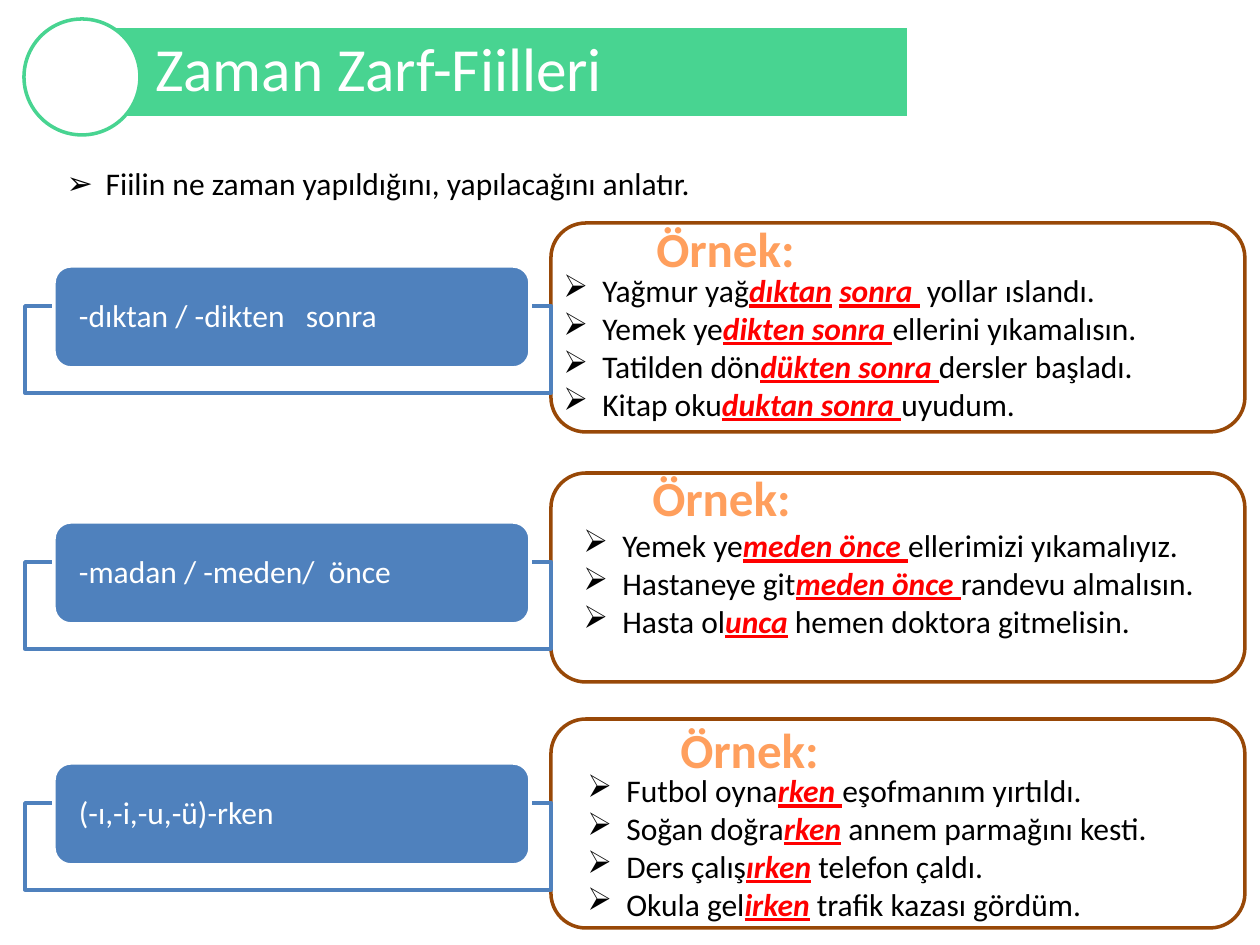
from pptx import Presentation
from pptx.dml.color import RGBColor
from pptx.enum.shapes import MSO_SHAPE
from pptx.enum.text import MSO_ANCHOR, MSO_AUTO_SIZE, PP_ALIGN
from pptx.oxml.ns import qn
from pptx.util import Emu, Pt
from lxml.etree import SubElement

PX = 914400 / 126
GREEN = RGBColor(0x48, 0xD4, 0x91)
BLUE = RGBColor(0x4F, 0x81, 0xBD)
BROWN = RGBColor(0x98, 0x48, 0x07)
ORANGE = RGBColor(0xFF, 0x9F, 0x5D)
RED = RGBColor(0xFF, 0x00, 0x00)
BLACK = RGBColor(0x00, 0x00, 0x00)
WHITE = RGBColor(0xFF, 0xFF, 0xFF)


def px(*nums):
    return [Emu(round(n * PX)) for n in nums]


class Page:
    font = "Calibri"
    size = 18
    indent = 39

    def __init__(self, deck):
        self.slide = deck.slides.add_slide(deck.slide_layouts[1])
        self.shapes = self.slide.shapes

    def paint(self, shape, fill, line):
        shape.fill.solid()
        shape.fill.fore_color.rgb = fill
        shape.line.color.rgb = line
        shape.line.width = Pt(2)

    def place(self, shape, box):
        shape.left, shape.top, shape.width, shape.height = px(*box)

    def style(self, para, size, color, bold=None):
        font = para.font
        font.name, font.size, font.bold = self.font, Pt(size), bold
        font.color.rgb = color

    def shape(self, kind, box, fill, line):
        item = self.shapes.add_shape(kind, *px(*box))
        item.shadow.inherit = False
        self.paint(item, fill, line)
        return item

    def caption(self, shape, text, size, inset):
        """Left-aligned white text inside a filled shape."""
        frame = shape.text_frame
        frame.text = text
        frame.word_wrap = True
        frame.auto_size = MSO_AUTO_SIZE.NONE
        frame.vertical_anchor = MSO_ANCHOR.MIDDLE
        frame.margin_left, frame.margin_right = px(inset, 13)
        para = frame.paragraphs[0]
        para.alignment = PP_ALIGN.LEFT
        para.line_spacing = 0.9
        self.style(para, size, WHITE)

    def title(self, text, box):
        item = self.shapes.title
        self.place(item, box)
        self.paint(item, GREEN, WHITE)
        self.caption(item, text, 35, 73)

    def label(self, text, box):
        item = self.shape(MSO_SHAPE.ROUNDED_RECTANGLE, box, BLUE, WHITE)
        self.caption(item, text, self.size, 20)

    def frame(self, box):
        item = self.shape(MSO_SHAPE.RECTANGLE, box, WHITE, BLUE)
        color = item.fill._xPr.find(qn("a:solidFill"))[0]
        SubElement(color, qn("a:alpha"), val="90000")

    def heading(self, text, box):
        item = self.shapes.add_textbox(*px(*box))
        item.text_frame.text = text
        para = item.text_frame.paragraphs[0]
        para.alignment = PP_ALIGN.CENTER
        self.style(para, 28, ORANGE, True)

    def bullets(self, frame, lines):
        """Fill a frame with bullets; text between bars is emphasised."""
        frame.word_wrap = True
        frame.auto_size = MSO_AUTO_SIZE.NONE
        for row, line in enumerate(lines):
            para = frame.add_paragraph() if row else frame.paragraphs[0]
            props = para._p.get_or_add_pPr()
            step = px(self.indent)[0]
            props.set("marL", str(step))
            props.set("indent", str(-step))
            SubElement(props, qn("a:buChar"), char="➢")
            para.space_before = Pt(0)
            self.style(para, self.size, BLACK)
            for part, text in enumerate(line.split("|")):
                run = para.add_run()
                run.text = text
                if part % 2:
                    font = run.font
                    font.bold = font.italic = font.underline = True
                    font.color.rgb = RED

    def body(self, lines, box):
        item = self.slide.placeholders[1]
        self.place(item, box)
        self.bullets(item.text_frame, lines)

    def list(self, lines, box):
        item = self.shapes.add_textbox(*px(*box))
        self.bullets(item.text_frame, lines)


# Per row: suffix, card top, frame top, heading corner, list corner, examples
ROWS = [
    ("-dıktan / -dikten   sonra", 223, 306, (643, 212), (551, 265), [
        "Yağmur yağ|dıktan| |sonra | yollar ıslandı.",
        "Yemek ye|dikten sonra |ellerini yıkamalısın.",
        "Tatilden dön|dükten sonra |dersler başladı.",
        "Kitap oku|duktan sonra |uyudum."]),
    ("-madan / -meden/  önce", 473, 562, (639, 461), (571, 520), [
        "Yemek ye|meden önce |ellerimizi yıkamalıyız.",
        "Hastaneye git|meden önce |randevu almalısın.",
        "Hasta ol|unca| hemen doktora gitmelisin."]),
    ("(-ı,-i,-u,-ü)-rken", 719, 803, (667, 713), (575, 765), [
        "Futbol oyna|rken |eşofmanım yırtıldı.",
        "Soğan doğra|rken| annem parmağını kesti.",
        "Ders çalış|ırken| telefon çaldı.",
        "Okula gel|irken| trafik kazası gördüm."]),
]


def main():
    deck = Presentation()
    deck.slide_width, deck.slide_height = px(1260, 945)
    page = Page(deck)

    # Title banner and definition
    page.title("Zaman Zarf-Fiilleri", (82, 26, 827, 92))
    page.shape(MSO_SHAPE.OVAL, (24, 19, 116, 116), WHITE, GREEN)
    page.body(["Fiilin ne zaman yapıldığını, yapılacağını anlatır."],
              (54, 158, 656, 50))

    # Suffix labels with their example cards
    for suffix, card, edge, head, spot, lines in ROWS:
        page.shape(MSO_SHAPE.ROUNDED_RECTANGLE, (551, card, 694, 209),
                   WHITE, BROWN)
        page.heading("Örnek:", (*head, 165, 72))
        page.list(lines, (*spot, 655, 13 + 38 * len(lines)))
        page.frame((25, edge, 526, 87))
        page.label(suffix, (54, edge - 40, 476, 102))

    deck.save("out.pptx")


if __name__ == "__main__":
    main()
